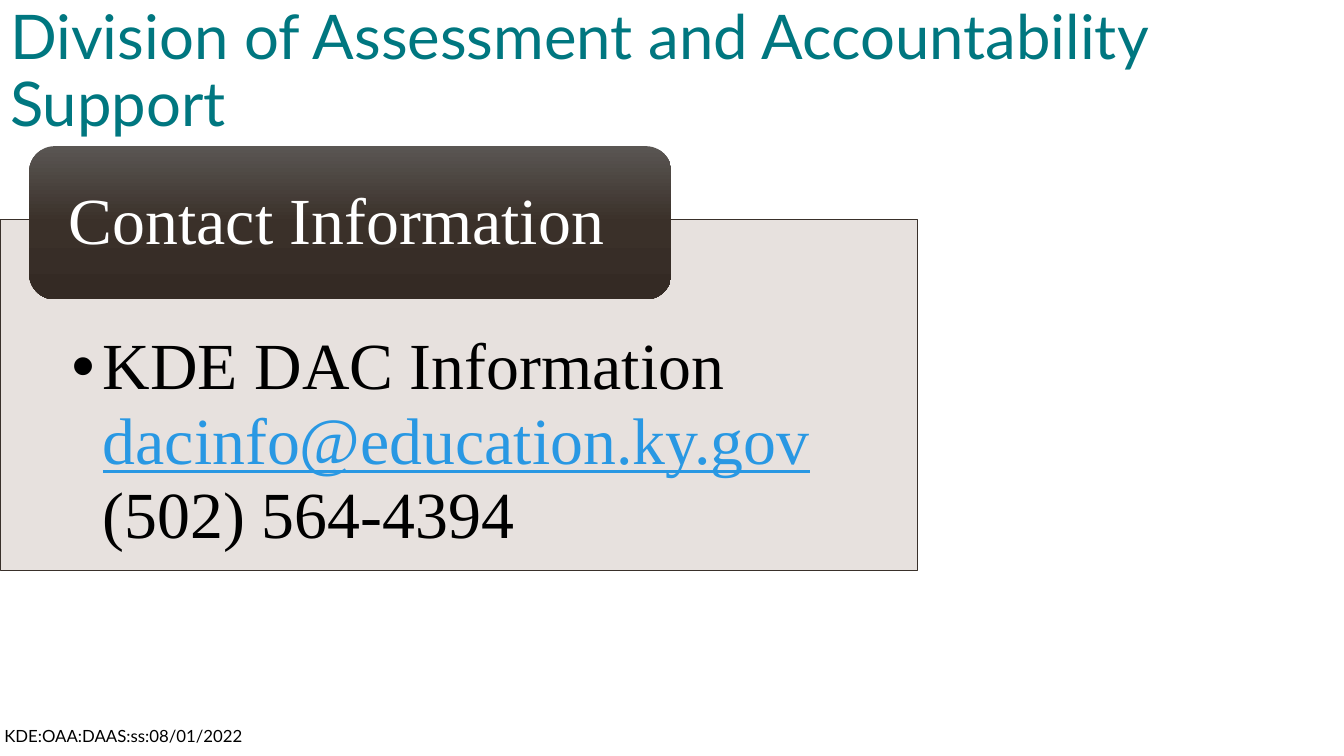
from dataclasses import dataclass

from lxml import etree
from pptx import Presentation
from pptx.dml.color import RGBColor
from pptx.enum.shapes import MSO_SHAPE
from pptx.enum.text import MSO_ANCHOR, MSO_AUTO_SIZE, PP_ALIGN
from pptx.oxml.ns import qn
from pptx.util import Inches, Pt

ROUNDED = MSO_SHAPE.ROUNDED_RECTANGLE
TOP, MIDDLE = MSO_ANCHOR.TOP, MSO_ANCHOR.MIDDLE
LEFT, CENTER = PP_ALIGN.LEFT, PP_ALIGN.CENTER
NO_AUTOFIT = MSO_AUTO_SIZE.NONE

SANS, SERIF = "Lato", "Times New Roman"
TEAL, BLACK, WHITE = "007780", "000000", "FFFFFF"
PANEL, PANEL_EDGE, LINK_BLUE = "E5DEDB", "39302A", "2998E3"
BROWN_STOPS = ((0, "5A5653"), (50, "3A3029"), (100, "342A24"))


@dataclass(frozen=True)
class Style:
    font: str
    size: float
    color: str
    align: PP_ALIGN = LEFT
    anchor: MSO_ANCHOR = MIDDLE
    spacing: float = 0.9
    insets: tuple[float, float, float, float] = (0.1, 0.05, 0.1, 0.05)


@dataclass(frozen=True)
class Piece:
    text: str
    color: str = BLACK
    underline: bool = False


HEADING = Style(SANS, 44, TEAL)
CONTACT = Style(SERIF, 47, BLACK, anchor=TOP, spacing=0.94, insets=(0.71, 1.1, 0.71, 0.37))
LABEL = Style(SERIF, 47, WHITE, insets=(0.32, 0, 0.32, 0))
STAMP = Style(SANS, 12, BLACK, align=CENTER, spacing=1.0)

CONTACT_PIECES = (
    Piece("KDE DAC Information "),
    Piece("dacinfo@education.ky.gov", LINK_BLUE, True),
    Piece(" (502) 564-4394"),
)


def rgb(color: str) -> RGBColor:
    return RGBColor.from_string(color)


def place(shape, left: float, top: float, width: float, height: float) -> None:
    shape.left, shape.top = Inches(left), Inches(top)
    shape.width, shape.height = Inches(width), Inches(height)


def write(shape, pieces: tuple[Piece, ...], style: Style) -> None:
    """Fill the shape with one paragraph made of the given pieces."""
    frame = shape.text_frame
    frame.auto_size = NO_AUTOFIT
    frame.word_wrap = True
    frame.vertical_anchor = style.anchor
    (frame.margin_left, frame.margin_top,
     frame.margin_right, frame.margin_bottom) = map(Inches, style.insets)
    paragraph = frame.paragraphs[0]
    paragraph.alignment = style.align
    paragraph.line_spacing = style.spacing
    paragraph.space_before = Pt(0)
    for piece in pieces:
        run = paragraph.add_run()
        run.text = piece.text
        run.font.name = style.font
        run.font.size = Pt(style.size)
        run.font.color.rgb = rgb(piece.color)
        run.font.underline = piece.underline


def add_bullet(paragraph, indent: float) -> None:
    properties = paragraph._p.get_or_add_pPr()
    properties.set("marL", str(Inches(indent)))
    properties.set("indent", str(-Inches(indent)))
    etree.SubElement(properties, qn("a:buFont"), typeface="Arial")
    etree.SubElement(properties, qn("a:buChar"), char="•")


def set_opacity(shape, percent: int) -> None:
    color = shape._element.spPr.find(qn("a:solidFill"))[0]
    etree.SubElement(color, qn("a:alpha"), val=str(percent * 1000))


def fill_downward(shape, stops: tuple[tuple[int, str], ...]) -> None:
    """Give the shape a gradient running from top to bottom."""
    shape.fill.gradient()
    gradient = shape._element.spPr.find(qn("a:gradFill"))
    stop_list = gradient.find(qn("a:gsLst"))
    for stop in list(stop_list):
        stop_list.remove(stop)
    for position, color in stops:
        stop = etree.SubElement(stop_list, qn("a:gs"), pos=str(position * 1000))
        etree.SubElement(stop, qn("a:srgbClr"), val=color)
    direction = gradient.find(qn("a:lin"))
    direction.set("ang", "5400000")
    direction.set("scaled", "0")


def main() -> None:
    deck = Presentation()
    deck.slide_width, deck.slide_height = Inches(13.33), Inches(7.5)
    slide = deck.slides.add_slide(deck.slide_layouts[1])

    heading = slide.shapes.title
    place(heading, 0, 0, 11.5, 1.45)
    write(heading, (Piece("Division of Assessment and Accountability Support", TEAL),), HEADING)

    contact = slide.placeholders[1]
    place(contact, 0, 2.18, 9.1, 3.48)
    contact.fill.solid()
    contact.fill.fore_color.rgb = rgb(PANEL)
    set_opacity(contact, 90)
    contact.line.color.rgb = rgb(PANEL_EDGE)
    contact.line.width = Pt(0.5)
    add_bullet(contact.text_frame.paragraphs[0], 0.31)
    write(contact, CONTACT_PIECES, CONTACT)

    label = slide.shapes.add_shape(ROUNDED, 0, 0, 0, 0)
    place(label, 0.29, 1.45, 6.37, 1.52)
    label.shadow.inherit = False
    label.line.fill.background()
    fill_downward(label, BROWN_STOPS)
    write(label, (Piece("Contact Information", WHITE),), LABEL)

    stamp = slide.shapes.add_textbox(0, 0, 0, 0)
    place(stamp, -0.21, 7.1, 2.87, 0.4)
    write(stamp, (Piece("KDE:OAA:DAAS:ss:08/01/2022"),), STAMP)

    deck.save("out.pptx")


if __name__ == "__main__":
    main()
